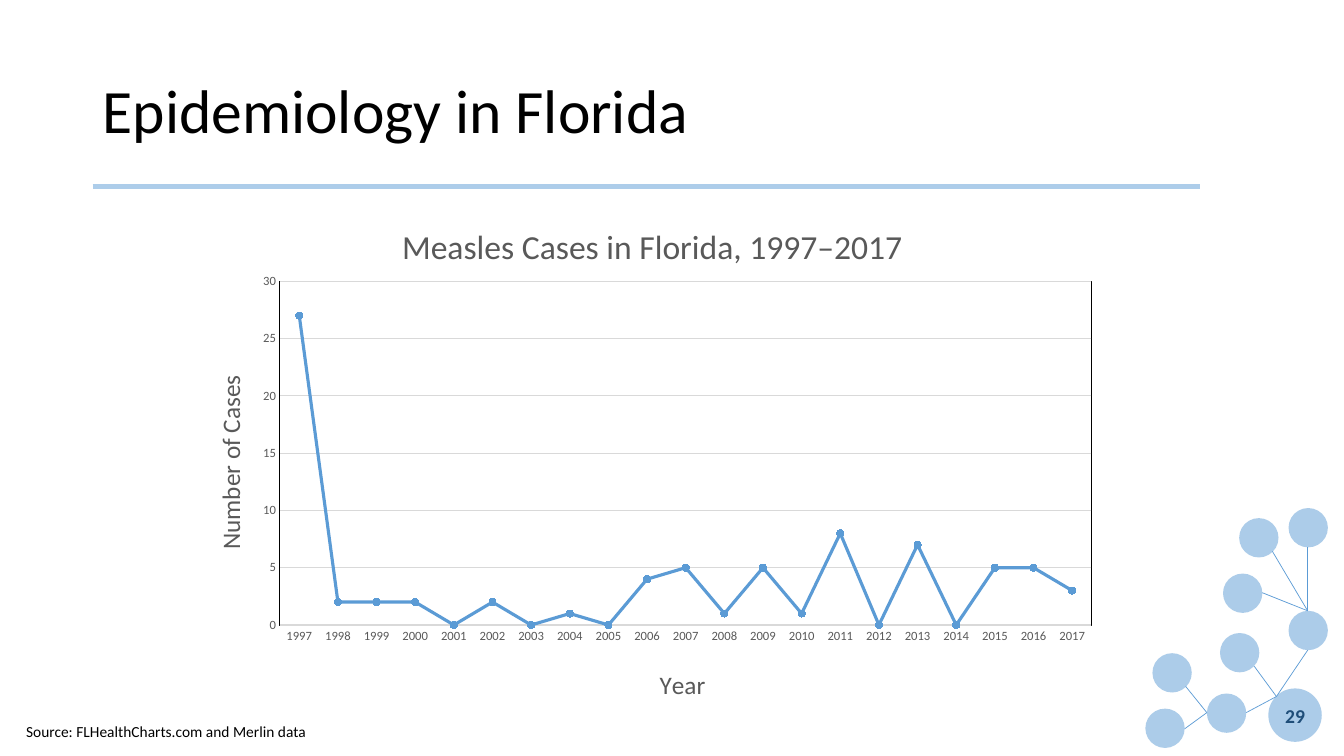
from lxml import etree
from pptx import Presentation
from pptx import util as u
from pptx.chart.data import CategoryChartData
from pptx.dml.color import RGBColor
from pptx.enum import chart as ch, shapes, text
from pptx.oxml import parse_xml
from pptx.oxml.ns import nsdecls, qn

TITLE = "Epidemiology in Florida"
SOURCE = "Source: FLHealthCharts.com and Merlin data"
PAGE = "29"
CHART_TITLE = "Measles Cases in Florida, 1997–2017"
YEARS = range(1997, 2018)
CASES = [27, 2, 2, 2, 0, 2, 0, 1, 0, 4, 5, 1, 5, 1, 8, 0, 7, 0, 5, 5, 3]

FONT = "Calibri"
COLORS = {"ink": "000000", "blue": "5B9BD5", "rule": "ADCDEA", "gray": "595959",
          "grid": "D9D9D9", "page": "1F4E79"}
CHART_BOX = (1.81, 1.95, 9.21, 5.16)
PLOT_BOX = (2.78, 2.79, 8.05, 3.41)
BIG, SMALL = 0.53, 0.39
NODES = [(12.58, 6.83, BIG)] + [(x, y, SMALL) for x, y in [
    (12.78, 6.06), (11.36, 7.03), (11.43, 6.48), (12.29, 5.14),
    (12.13, 5.69), (11.97, 6.88), (12.1, 6.28), (12.78, 5.04)]]
BRANCHES = {
    (12.66, 6.91): [(12.97, 6.45), (12.36, 7.07), (12.44, 6.61)],
    (11.97, 7.07): [(11.75, 7.23), (11.76, 6.81)],
    (12.97, 6.06): [(12.97, 5.43), (12.62, 5.47), (12.52, 5.88)],
}

deck = Presentation()
deck.slide_width, deck.slide_height = u.Inches(13.33), u.Inches(7.5)
slide = deck.slides.add_slide(deck.slide_layouts[6])


def inches(*lengths):
    return [u.Inches(length) for length in lengths]


def rgb(name):
    return RGBColor.from_string(COLORS[name])


def set_font(font, size, color, bold=False):
    font.name, font.size, font.bold = FONT, u.Pt(size), bold
    font.color.rgb = rgb(color)


def set_line(line, color, width):
    line.color.rgb = rgb(color)
    line.width = u.Pt(width)


def add_line(start, end, color, width):
    line = slide.shapes.add_connector(shapes.MSO_CONNECTOR.STRAIGHT, *inches(*start, *end))
    set_line(line.line, color, width)
    etree.SubElement(line._element.spPr, qn("a:effectLst"))


def add_node(left, top, size):
    node = slide.shapes.add_shape(shapes.MSO_SHAPE.OVAL, *inches(left, top, size, size))
    node.shadow.inherit = False
    node.fill.solid()
    node.fill.fore_color.rgb = rgb("blue")
    node.line.fill.background()
    tint = node._element.spPr.find(".//" + qn("a:srgbClr"))
    etree.SubElement(tint, qn("a:alpha"), val="50000")


def add_text(words, box, size, color="ink", bold=False, middle=False, centred=False):
    frame = slide.shapes.add_textbox(*inches(*box)).text_frame
    frame.word_wrap = True
    if middle:
        frame.vertical_anchor = text.MSO_ANCHOR.MIDDLE
    line = frame.paragraphs[0]
    line.text = words
    if centred:
        line.alignment = text.PP_ALIGN.CENTER
    set_font(line.font, size, color, bold)
    return line


def place(part, left, top, size=None):
    shares = {"x": (left - CHART_BOX[0]) / CHART_BOX[2],
              "y": (top - CHART_BOX[1]) / CHART_BOX[3]}
    if size:
        shares.update(w=size[0] / CHART_BOX[2], h=size[1] / CHART_BOX[3])
    target = '<c:layoutTarget val="inner"/>' if size else ""
    rules = "".join(f'<c:{key}Mode val="edge"/>' for key in "xy")
    rules += "".join(f'<c:{key} val="{share:.3f}"/>' for key, share in shares.items())
    layout = parse_xml(f'<c:layout {nsdecls("c")}><c:manualLayout>{target}{rules}'
                       '</c:manualLayout></c:layout>')
    old = part.find(qn("c:layout"))
    if old is not None:
        part.remove(old)
    heading = part.find(qn("c:tx"))
    part.insert(0 if heading is None else 1, layout)


def set_title(title, words, size, left, top, turned=False):
    frame = title.text_frame
    frame.text = words
    set_font(frame.paragraphs[0].font, size, "gray")
    if turned:
        body = frame._txBody.find(qn("a:bodyPr"))
        body.set("rot", "-5400000")
        body.set("vert", "horz")
    place(title._element, left, top)


for node in NODES:
    add_node(*node)
for hub, tips in BRANCHES.items():
    for tip in tips:
        add_line(hub, tip, "blue", 0.5)
add_line((0.92, 1.85), (11.9, 1.85), "rule", 4)
heading = add_text(TITLE, (0.92, 0.4, 10.99, 1.45), 44, middle=True)
heading.line_spacing = 0.9

data = CategoryChartData()
data.categories = [str(year) for year in YEARS]
data.add_series("Series 1", CASES)
chart = slide.shapes.add_chart(ch.XL_CHART_TYPE.LINE_MARKERS, *inches(*CHART_BOX), data).chart
chart.has_legend = False
set_font(chart.font, 10, "ink")
chart.has_title = True
set_title(chart.chart_title, CHART_TITLE, 24, 3.93, 2.16)

years, counts = chart.category_axis, chart.value_axis
set_title(years.axis_title, "Year", 18, 6.5, 6.58)
set_title(counts.axis_title, "Number of Cases", 18, 2.07, 3.68, turned=True)
for axis in (years, counts):
    axis.major_tick_mark = axis.minor_tick_mark = ch.XL_TICK_MARK.NONE
    set_font(axis.tick_labels.font, 9, "gray")
set_line(years.format.line, "grid", 0.75)
counts.format.line.fill.background()
counts.minimum_scale, counts.maximum_scale, counts.major_unit = 0, 30, 5
counts.has_major_gridlines = True
set_line(counts.major_gridlines.format.line, "grid", 0.75)

plot = chart.plots[0]
plot.vary_by_categories = False
cases = plot.series[0]
cases.smooth = False
set_line(cases.format.line, "blue", 2.25)
cases.marker.style, cases.marker.size = ch.XL_MARKER_STYLE.CIRCLE, 5
cases.marker.format.fill.solid()
cases.marker.format.fill.fore_color.rgb = rgb("blue")
set_line(cases.marker.format.line, "blue", 0.75)

plot_area = chart._chartSpace.chart.plotArea
place(plot_area, *PLOT_BOX[:2], size=PLOT_BOX[2:])
plot_area.append(parse_xml(
    f'<c:spPr {nsdecls("c", "a")}><a:noFill/><a:ln w="9525"><a:solidFill>'
    f'<a:srgbClr val="{COLORS["ink"]}"/></a:solidFill></a:ln></c:spPr>'))

add_text(SOURCE, (0.16, 7.11, 8.91, 0.29), 11)
add_text(PAGE, (12.59, 6.9, 0.51, 0.4), 14, "page", bold=True, middle=True, centred=True)

deck.save("out.pptx")
